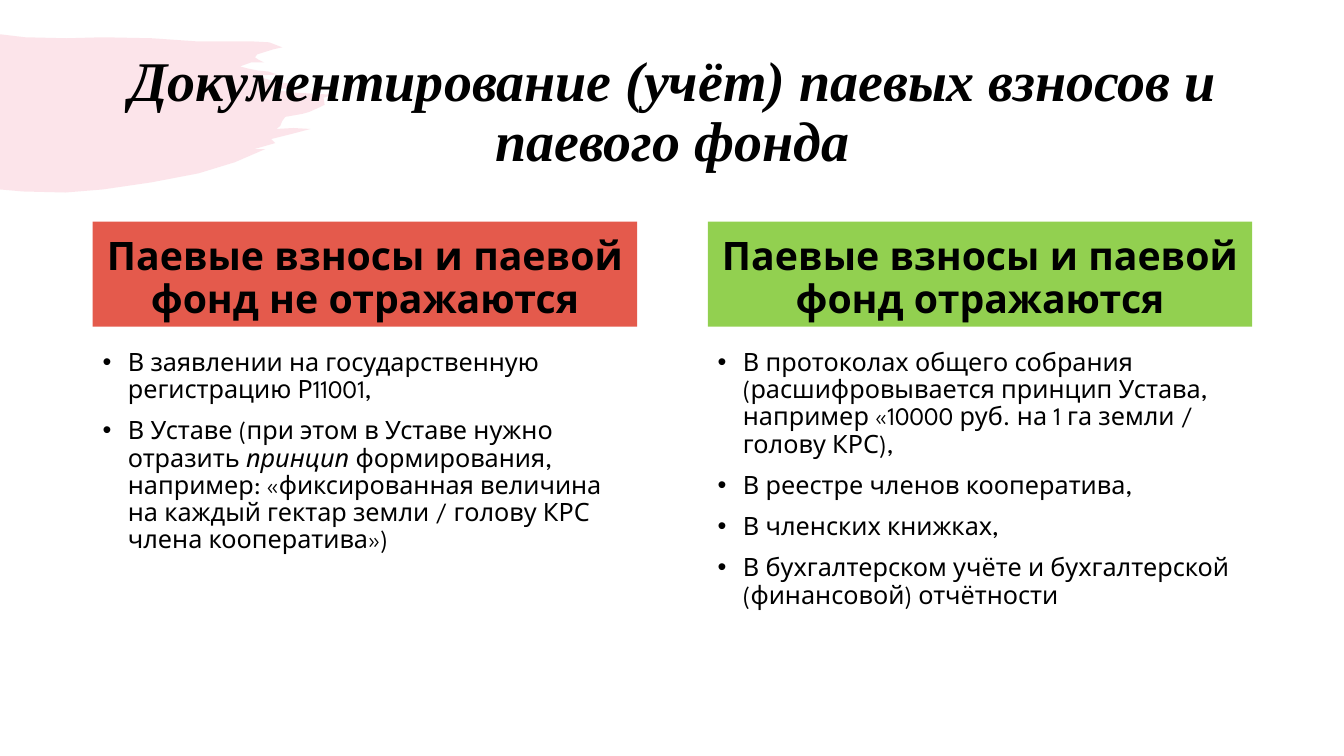
from dataclasses import dataclass

from lxml import etree
from pptx import Presentation
from pptx.dml.color import RGBColor
from pptx.enum.shapes import MSO_SHAPE
from pptx.enum.text import MSO_ANCHOR, MSO_AUTO_SIZE, PP_ALIGN
from pptx.oxml.ns import qn
from pptx.util import Inches, Pt

RECT = MSO_SHAPE.RECTANGLE
TOP, MIDDLE, BOTTOM = MSO_ANCHOR.TOP, MSO_ANCHOR.MIDDLE, MSO_ANCHOR.BOTTOM
LEFT, CENTER = PP_ALIGN.LEFT, PP_ALIGN.CENTER


@dataclass(frozen=True)
class Theme:
    title_font: str = "Times New Roman"
    body_font: str = "League Spartan"
    title_size: int = 40
    heading_size: int = 28
    body_size: int = 18
    ink: str = "000000"
    red: str = "E45A4C"
    green: str = "92D050"
    brush: str = "F07C98"
    brush_opacity: int = 20


THEME = Theme()

# Content: each bullet is a list of (text, italic) runs
TITLE = "Документирование (учёт) паевых взносов и паевого фонда"
COLUMNS = [
    ("Паевые взносы и паевой фонд не отражаются", THEME.red, [
        [("В заявлении на государственную регистрацию Р11001,", False)],
        [("В Уставе (при этом в Уставе нужно отразить ", False),
         ("принцип", True),
         (" формирования, например: «фиксированная величина на каждый гектар "
          "земли / голову КРС члена кооператива»)", False)],
    ]),
    ("Паевые взносы и паевой фонд отражаются", THEME.green, [
        [("В протоколах общего собрания (расшифровывается принцип Устава, "
          "например «10000 руб. на 1 га земли / голову КРС),", False)],
        [("В реестре членов кооператива,", False)],
        [("В членских книжках,", False)],
        [("В бухгалтерском учёте и бухгалтерской (финансовой) отчётности", False)],
    ]),
]
BRUSH_OUTLINE = [
    (0, 0.34), (0.25, 0.37), (0.66, 0.38), (1.02, 0.37), (1.51, 0.38), (1.94, 0.41),
    (2.48, 0.41), (2.67, 0.42), (2.8, 0.47), (2.71, 0.49), (2.55, 0.54), (2.53, 0.57),
    (2.56, 0.59), (2.62, 0.62), (2.49, 0.62), (2.38, 0.66), (2.46, 0.68), (2.56, 0.7),
    (2.66, 0.71), (2.75, 0.74), (2.51, 0.75), (2.63, 0.78), (2.73, 0.81), (2.8, 0.82),
    (2.88, 0.83), (2.9, 0.85), (2.87, 0.88), (2.84, 0.88), (2.63, 0.88), (2.94, 0.92),
    (3.3, 0.94), (3.21, 0.97), (3.22, 1.04), (3.18, 1.06), (3.07, 1.11), (3, 1.13),
    (2.83, 1.16), (2.8, 1.2), (2.78, 1.25), (2.74, 1.28), (2.91, 1.27), (3.08, 1.28),
    (2.89, 1.33), (2.69, 1.38), (2.73, 1.42), (2.52, 1.48), (2.63, 1.48), (2.33, 1.61),
    (1.97, 1.72), (1.5, 1.81), (1.02, 1.88), (0.65, 1.91), (0.23, 1.9), (0, 1.88),
]

# Layout in inches
SLIDE_W, SLIDE_H = 13.33, 7.5
MARGIN, COLUMN_W, GUTTER = 0.92, 5.4, 0.7
TITLE_TOP, TITLE_H = 0.4, 1.45
HEADING_TOP, HEADING_H = 2.2, 1.04
LIST_TOP, LIST_H = 3.42, 3.35
INDENT = 0.25
SPACE_BEFORE = 10


def box(*lengths):
    return [Inches(v) for v in lengths]


def set_fill(shape, color):
    shape.shadow.inherit = False
    shape.fill.solid()
    shape.fill.fore_color.rgb = RGBColor.from_string(color)
    shape.line.fill.background()


def set_frame(tf, anchor):
    form = {"word_wrap": True, "auto_size": MSO_AUTO_SIZE.NONE, "vertical_anchor": anchor}
    for name, value in form.items():
        setattr(tf, name, value)


def write(p, runs, align, spacing=0.9, before=SPACE_BEFORE, **font):
    """Fill a paragraph with (text, italic) runs that share one font."""
    p.alignment, p.line_spacing, p.space_before = align, spacing, Pt(before)
    for text, italic in runs:
        r = p.add_run()
        r.text = text
        r.font.color.rgb = RGBColor.from_string(THEME.ink)
        for name, value in {**font, "italic": italic}.items():
            setattr(r.font, name, value)


def add_bullet(p):
    pPr = p._p.get_or_add_pPr()
    pPr.set("marL", str(Inches(INDENT)))
    pPr.set("indent", str(-Inches(INDENT)))
    etree.SubElement(pPr, qn("a:buFont")).set("typeface", "Arial")
    etree.SubElement(pPr, qn("a:buChar")).set("char", "•")


def add_brush(s):
    points = [(Inches(x), Inches(y)) for x, y in BRUSH_OUTLINE]
    builder = s.shapes.build_freeform(*points[0])
    builder.add_line_segments(points[1:], close=True)
    brush = builder.convert_to_shape()
    set_fill(brush, THEME.brush)
    color = brush._element.spPr.find(qn("a:solidFill"))[0]
    etree.SubElement(color, qn("a:alpha")).set("val", str(THEME.brush_opacity * 1000))
    s.shapes._spTree.insert(2, brush._element)


def add_title(s):
    title = s.shapes.title
    title.left, title.top, title.width, title.height = box(
        MARGIN, TITLE_TOP, 2 * COLUMN_W + GUTTER, TITLE_H)
    set_frame(title.text_frame, MIDDLE)
    write(title.text_frame.paragraphs[0], [(TITLE, True)], CENTER, before=0,
          name=THEME.title_font, size=Pt(THEME.title_size), bold=True)


def add_column(s, left, heading, color, bullets):
    sp = s.shapes.add_shape(RECT, *box(left, HEADING_TOP, COLUMN_W, HEADING_H))
    set_fill(sp, color)
    set_frame(sp.text_frame, BOTTOM)
    write(sp.text_frame.paragraphs[0], [(heading, False)], CENTER,
          name=THEME.body_font, size=Pt(THEME.heading_size), bold=True)

    tf = s.shapes.add_textbox(*box(left, LIST_TOP, COLUMN_W, LIST_H)).text_frame
    set_frame(tf, TOP)
    for i, runs in enumerate(bullets):
        p = tf.add_paragraph() if i else tf.paragraphs[0]
        write(p, runs, LEFT, name=THEME.body_font, size=Pt(THEME.body_size))
        add_bullet(p)


def main():
    prs = Presentation()
    prs.slide_width, prs.slide_height = box(SLIDE_W, SLIDE_H)
    s = prs.slides.add_slide(prs.slide_layouts[5])
    add_brush(s)
    add_title(s)
    for i, column in enumerate(COLUMNS):
        add_column(s, MARGIN + i * (COLUMN_W + GUTTER), *column)
    prs.save("out.pptx")


if __name__ == "__main__":
    main()
